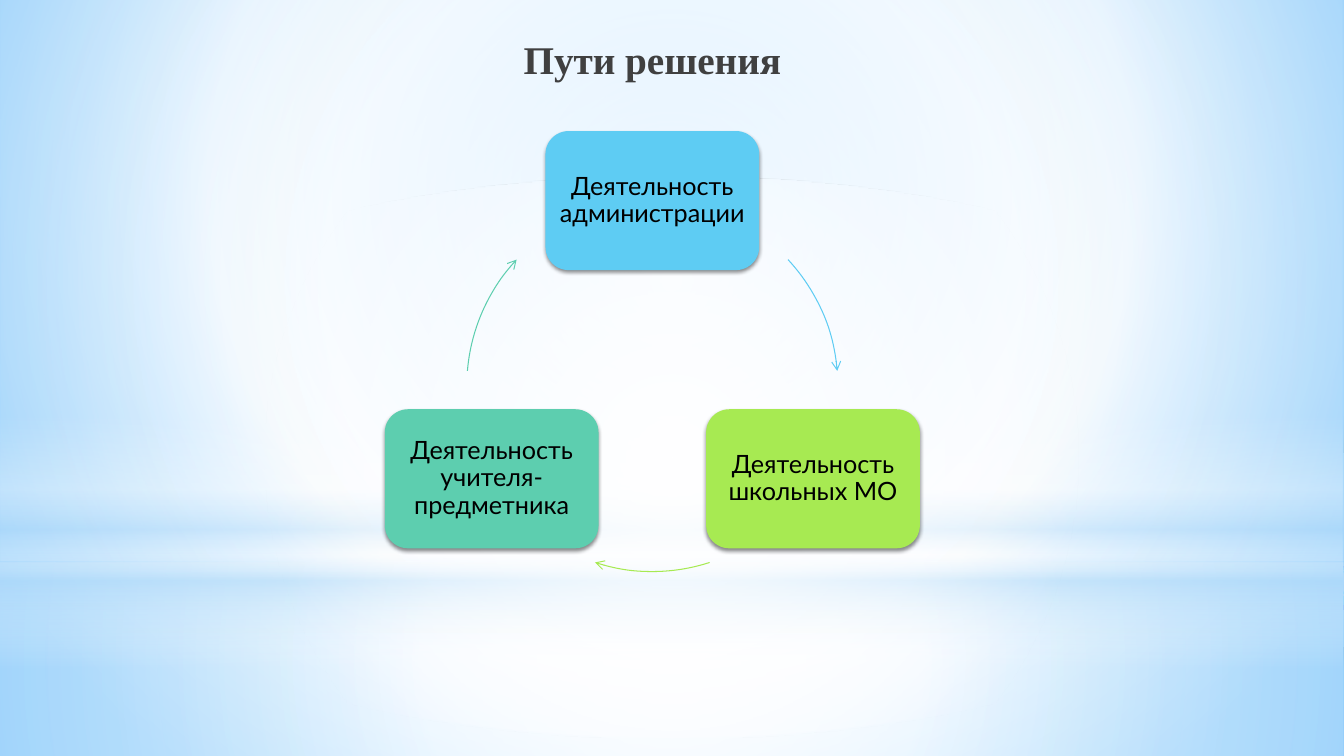
from math import cos, radians, sin

from pptx import Presentation
from pptx.dml.color import RGBColor
from pptx.enum.shapes import MSO_SHAPE as Kind
from pptx.enum.text import MSO_ANCHOR as Anchor, MSO_AUTO_SIZE as Fit, PP_ALIGN as Align
from pptx.oxml import parse_xml
from pptx.oxml.ns import nsdecls, qn
from pptx.util import Inches, Pt

TITLE = "Пути решения"
STEPS = [
    ("Деятельность администрации", "5ECCF3", -90, (317, 355.3)),
    ("Деятельность школьных МО", "A7EA52", 30, (72, 108)),
    ("Деятельность учителя-предметника", "5DCEAF", 150, (184.7, 223)),
]
MID_X, MID_Y, RADIUS = 6.47, 3.83, 1.84
BOX_W, BOX_H, INSET = 2.12, 1.38, 0.06

CENTER = (50, 50, 50, 50)
BACK = [(0, "9ED5FF", 100), (60, "FFFFFF", 100), (100, "5BB9FF", 100)]
BANDS = [
    (Kind.RECTANGLE, 5.58, 1.92, CENTER,
     [(0, "FFFFFF", 91), (37, "FFFFFF", 76), (100, "B4DCFA", 79)]),
    (Kind.RECTANGLE, 0, 5.58, CENTER,
     [(0, "FFFFFF", 89), (48, "FFFFFF", 62), (100, "B4DCFA", 79)]),
    (Kind.RECTANGLE, 4.12, 2.5, None,
     [(0, "FFFFFF", 0), (29, "FFFFFF", 30), (45, "B4DCFA", 40),
      (55, "FFFFFF", 26), (65, "B4DCFA", 60), (100, "FFFFFF", 0)]),
    (Kind.OVAL, 1.75, 5.58, CENTER, [(0, "FFFFFF", 100), (56, "FFFFFF", 0)]),
]


def color(code):
    return RGBColor.from_string(code)


def blend(fill, root, stops, focus):
    fill.gradient()
    old = root.find(".//" + qn("a:gradFill"))
    marks = "".join(
        f'<a:gs pos="{pos * 1000}"><a:srgbClr val="{code}">'
        f'<a:alpha val="{alpha * 1000}"/></a:srgbClr></a:gs>'
        for pos, code, alpha in stops)
    if focus:
        sides = " ".join(f'{k}="{v * 1000}"' for k, v in zip("ltrb", focus))
        way = f'<a:path path="circle"><a:fillToRect {sides}/></a:path>'
    else:
        way = '<a:lin ang="5400000" scaled="0"/>'
    new = parse_xml(f'<a:gradFill {nsdecls("a")} rotWithShape="1">'
                    f'<a:gsLst>{marks}</a:gsLst>{way}</a:gradFill>')
    old.getparent().replace(old, new)


def add(slide, kind, x, y, w, h):
    shape = slide.shapes.add_shape(kind, Inches(x), Inches(y), Inches(w), Inches(h))
    shape.shadow.inherit = False
    return shape


def add_box(slide, text, code, angle):
    x = MID_X + RADIUS * cos(radians(angle)) - BOX_W / 2
    y = MID_Y + RADIUS * sin(radians(angle)) - BOX_H / 2
    box = add(slide, Kind.ROUNDED_RECTANGLE, x, y, BOX_W, BOX_H)
    box.fill.solid()
    box.fill.fore_color.rgb = color(code)
    box.line.fill.background()
    box.element.spPr.find(qn("a:effectLst")).append(parse_xml(
        f'<a:outerShdw {nsdecls("a")} blurRad="{Pt(3.1)}" dist="{Pt(1.8)}" '
        'dir="5400000" rotWithShape="0"><a:srgbClr val="000000">'
        '<a:alpha val="45000"/></a:srgbClr></a:outerShdw>'))
    frame = box.text_frame
    frame.word_wrap = True
    frame.vertical_anchor = Anchor.MIDDLE
    frame.margin_left = frame.margin_right = Inches(INSET)
    frame.margin_top = frame.margin_bottom = Inches(INSET)
    frame.text = text
    para = frame.paragraphs[0]
    para.alignment = Align.CENTER
    para.line_spacing = 0.9
    para.font.name = "Lato"
    para.font.size = Pt(18)
    para.font.color.rgb = color("000000")


def add_arc(slide, code, span):
    arc = add(slide, Kind.ARC, MID_X - RADIUS, MID_Y - RADIUS, 2 * RADIUS, 2 * RADIUS)
    for i, angle in enumerate(span):
        arc.adjustments[i] = angle * 0.6
    arc.fill.background()
    arc.line.color.rgb = color(code)
    arc.line.width = Pt(0.75)
    arc.element.spPr.find(qn("a:ln")).append(
        parse_xml(f'<a:tailEnd {nsdecls("a")} type="arrow"/>'))


def main():
    deck = Presentation()
    deck.slide_width, deck.slide_height = Inches(13.33), Inches(7.5)
    slide = deck.slides.add_slide(deck.slide_layouts[5])
    blend(slide.background.fill, slide.element, BACK, (20, 10, 20, 60))
    for kind, y, h, focus, stops in BANDS:
        band = add(slide, kind, 0, y, 13.33, h)
        blend(band.fill, band.element, stops, focus)
        band.line.fill.background()

    title = slide.shapes.title
    slide.shapes.element.append(title.element)
    title.left, title.top = Inches(1.72), Inches(0.3)
    title.width, title.height = Inches(9.5), Inches(1.25)
    frame = title.text_frame
    frame.text = TITLE
    frame.auto_size = Fit.NONE
    frame.vertical_anchor = Anchor.TOP
    para = frame.paragraphs[0]
    para.alignment = Align.CENTER
    para.font.name = "Times New Roman"
    para.font.size = Pt(28)
    para.font.bold = True
    para.font.color.rgb = color("404040")

    for text, code, angle, span in STEPS:
        add_box(slide, text, code, angle)
        add_arc(slide, code, span)
    deck.save("out.pptx")


if __name__ == "__main__":
    main()
